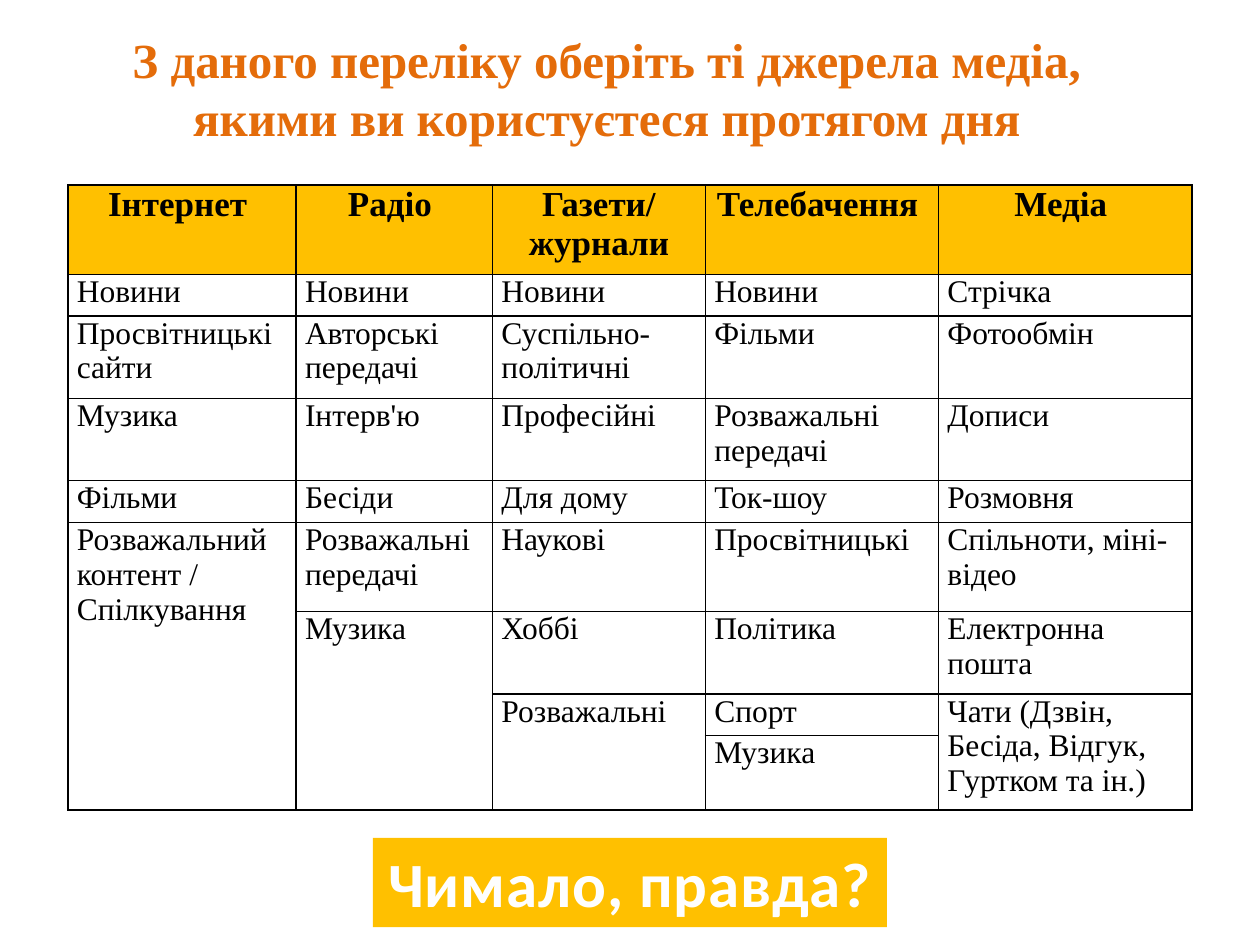
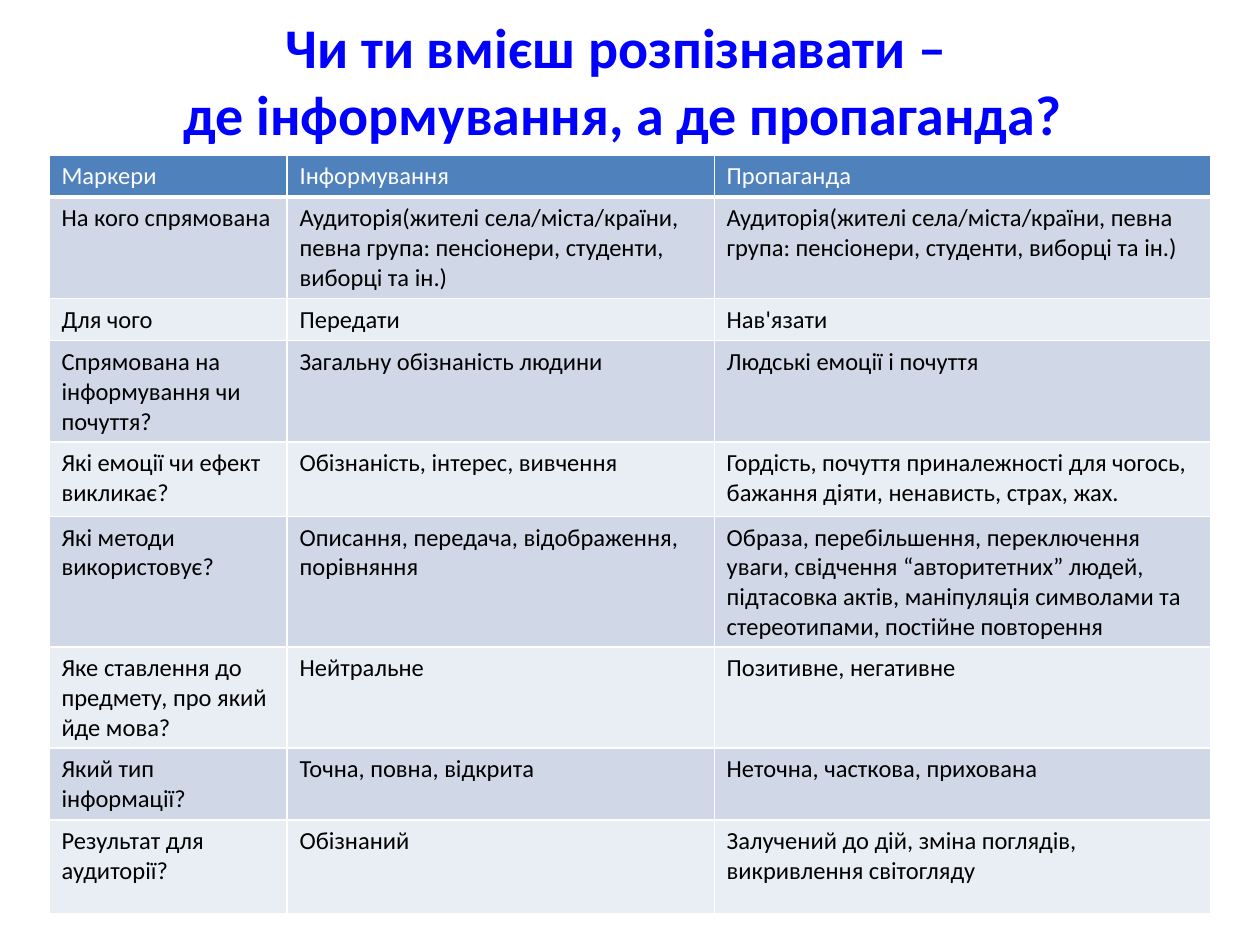
from dataclasses import dataclass

from lxml import etree
from pptx import Presentation
from pptx.dml.color import RGBColor
from pptx.enum.shapes import MSO_SHAPE
from pptx.enum.text import MSO_ANCHOR, MSO_AUTO_SIZE, PP_ALIGN
from pptx.oxml import parse_xml
from pptx.oxml.ns import nsdecls, qn
from pptx.util import Cm, Pt

RECTANGLE = MSO_SHAPE.RECTANGLE
TOP, MIDDLE = MSO_ANCHOR.TOP, MSO_ANCHOR.MIDDLE
GROW = MSO_AUTO_SIZE.SHAPE_TO_FIT_TEXT
LEFT, CENTER = PP_ALIGN.LEFT, PP_ALIGN.CENTER

BLACK = RGBColor(0x00, 0x00, 0x00)
WHITE = RGBColor(0xFF, 0xFF, 0xFF)
NEAR_WHITE = RGBColor(0xFE, 0xFE, 0xFE)
GOLD = RGBColor(0xFF, 0xC0, 0x00)
ORANGE = RGBColor(0xE4, 0x6C, 0x0A)
BRIGHT_BLUE = RGBColor(0x00, 0x00, 0xFF)
STEEL_BLUE = RGBColor(0x4F, 0x81, 0xBD)
DARK_BAND = RGBColor(0xD0, 0xD8, 0xE8)
LIGHT_BAND = RGBColor(0xE9, 0xED, 0xF4)

SERIF, SANS = "Times New Roman", "Calibri"


@dataclass(frozen=True)
class TextStyle:
    font: dict
    color: RGBColor
    align: PP_ALIGN = LEFT


@dataclass(frozen=True)
class Place:
    """Left, top, width and height in centimetres."""
    left: float
    top: float
    width: float
    height: float

    def lengths(self) -> tuple:
        return Cm(self.left), Cm(self.top), Cm(self.width), Cm(self.height)


@dataclass(frozen=True)
class TableLook:
    header: TextStyle
    body: TextStyle
    header_fill: RGBColor
    bands: tuple
    border: RGBColor
    header_rule: float
    margin_x: float
    margin_y: float


@dataclass(frozen=True)
class TableSpec:
    left: float
    top: float
    columns: tuple
    heights: tuple
    rows: list
    look: TableLook
    merges: tuple = ()


SOURCES_LOOK = TableLook(
    header=TextStyle({"name": SERIF, "size": Pt(20), "bold": True}, BLACK, CENTER),
    body=TextStyle({"name": SERIF, "size": Pt(18), "bold": False}, BLACK),
    header_fill=GOLD, bands=(WHITE,), border=BLACK, header_rule=1,
    margin_x=0.18, margin_y=0)

MARKERS_FONT = {"name": SANS, "size": Pt(14), "bold": False}
MARKERS_LOOK = TableLook(
    header=TextStyle(MARKERS_FONT, WHITE), body=TextStyle(MARKERS_FONT, BLACK),
    header_fill=STEEL_BLUE, bands=(DARK_BAND, LIGHT_BAND), border=WHITE,
    header_rule=3, margin_x=0.25, margin_y=0.13)

SOURCES = TableSpec(
    left=1.37, top=3.73,
    columns=(4.6, 3.96, 4.29, 4.7, 5.11),
    heights=(1.8, 0.84, 1.66, 1.66, 0.84, 1.8, 1.66, 0.84, 1.5),
    rows=[
        ["Інтернет ", "Радіо ", "Газети/\nжурнали", "Телебачення ", "Медіа "],
        ["Новини", "Новини", "Новини", "Новини", "Стрічка"],
        ["Просвітницькі сайти", "Авторські передачі", "Суспільно-політичні",
         "Фільми", "Фотообмін"],
        ["Музика", "Інтерв'ю", "Професійні", "Розважальні передачі", "Дописи"],
        ["Фільми", "Бесіди", "Для дому", "Ток-шоу", "Розмовня"],
        ["Розважальний контент / Спілкування", "Розважальні передачі", "Наукові",
         "Просвітницькі", "Спільноти, міні-відео"],
        ["", "Музика", "Хоббі", "Політика", "Електронна пошта"],
        ["", "", "Розважальні", "Спорт",
         "Чати (Дзвін, Бесіда, Відгук, Гуртком та ін.)"],
        ["", "", "", "Музика", ""],
    ],
    look=SOURCES_LOOK,
    merges=((5, 0), (6, 1), (7, 2), (7, 4)))

AUDIENCE = ("Аудиторія(жителі села/міста/країни, певна група: пенсіонери, "
            "студенти, виборці та ін.)")
MARKERS = TableSpec(
    left=0.99, top=3.12,
    columns=(4.8, 8.61, 10),
    heights=(0.84, 2.03, 0.84, 2.03, 1.5, 2.62, 2.03, 1.45, 1.88),
    rows=[
        ["Маркери", "Інформування", "Пропаганда"],
        ["На кого спрямована", AUDIENCE, AUDIENCE],
        ["Для чого", "Передати", "Нав'язати"],
        ["Спрямована на інформування чи почуття?",
         "Загальну обізнаність людини", "Людські емоції і почуття"],
        ["Які емоції чи ефект викликає?", "Обізнаність, інтерес, вивчення",
         "Гордість, почуття приналежності для чогось, бажання діяти, "
         "ненависть, страх, жах."],
        ["Які методи використовує?",
         "Описання, передача, відображення, порівняння",
         "Образа, перебільшення, переключення уваги, свідчення “авторитетних” "
         "людей, підтасовка актів, маніпуляція символами та стереотипами, "
         "постійне повторення"],
        ["Яке ставлення до предмету, про який йде мова?", "Нейтральне",
         "Позитивне, негативне"],
        ["Який тип інформації?", "Точна, повна, відкрита",
         "Неточна, часткова, прихована"],
        ["Результат для аудиторії?", "Обізнаний",
         "Залучений до дій, зміна поглядів, викривлення світогляду"],
    ],
    look=MARKERS_LOOK)


def write_text(frame, text: str, style: TextStyle) -> None:
    frame.text = text
    for para in frame.paragraphs:
        para.alignment = style.align
        for span in para.runs:
            for name, value in style.font.items():
                setattr(span.font, name, value)
            span.font.color.rgb = style.color


def add_titled_slide(deck, text: str, place: Place, style: TextStyle):
    slide = deck.slides.add_slide(deck.slide_layouts[5])
    title = slide.shapes.title
    title.left, title.top, title.width, title.height = place.lengths()
    frame = title.text_frame
    write_text(frame, text, style)
    frame.word_wrap = True
    frame.auto_size = GROW
    frame.vertical_anchor = TOP
    return slide


def set_borders(cell, color: RGBColor, bottom: float) -> None:
    """Draw 1 pt lines on three sides and a line of the given width below."""
    properties = cell._tc.get_or_add_tcPr()
    widths = {"lnL": 1, "lnR": 1, "lnT": 1, "lnB": bottom}
    for index, (side, width) in enumerate(widths.items()):
        properties.insert(index, parse_xml(
            f'<a:{side} {nsdecls("a")} w="{Pt(width)}"><a:solidFill>'
            f'<a:srgbClr val="{color}"/></a:solidFill></a:{side}>'))


def add_table(slide, spec: TableSpec) -> None:
    look = spec.look
    place = Place(spec.left, spec.top, sum(spec.columns), sum(spec.heights))
    table = slide.shapes.add_table(
        len(spec.heights), len(spec.columns), *place.lengths()).table
    table.first_row = table.horz_banding = False
    for column, width in zip(table.columns, spec.columns):
        column.width = Cm(width)
    for index, (row, height, texts) in enumerate(
            zip(table.rows, spec.heights, spec.rows)):
        row.height = Cm(height)
        is_header = index == 0
        band = look.bands[(index - 1) % len(look.bands)]
        for cell, text in zip(row.cells, texts):
            write_text(cell.text_frame, text, look.header if is_header else look.body)
            cell.margin_left = cell.margin_right = Cm(look.margin_x)
            cell.margin_top = cell.margin_bottom = Cm(look.margin_y)
            cell.fill.solid()
            cell.fill.fore_color.rgb = look.header_fill if is_header else band
            set_borders(cell, look.border, look.header_rule if is_header else 1)
    last_row = len(spec.heights) - 1
    for top, column in spec.merges:
        table.cell(top, column).merge(table.cell(last_row, column))


def add_text_effects(span) -> None:
    """Give the span wider letter spacing, a blue outline and a soft shadow."""
    properties = span.font._element
    properties.set("spc", "50")
    properties.insert(0, parse_xml(
        f'<a:ln {nsdecls("a")} w="{Pt(0.75)}"><a:solidFill>'
        f'<a:srgbClr val="{STEEL_BLUE}"/></a:solidFill></a:ln>'))
    effects = etree.Element(qn("a:effectLst"))
    shadow = etree.SubElement(effects, qn("a:outerShdw"), blurRad=str(Pt(3)),
                              dist=str(Pt(2)), dir="2700000", algn="tl")
    color = etree.SubElement(shadow, qn("a:srgbClr"), val=str(BLACK))
    etree.SubElement(color, qn("a:alpha"), val="40000")
    properties.find(qn("a:solidFill")).addnext(effects)


def add_banner(slide, text: str, place: Place, style: TextStyle) -> None:
    box = slide.shapes.add_shape(RECTANGLE, *place.lengths())
    box.shadow.inherit = False
    box.fill.solid()
    box.fill.fore_color.rgb = GOLD
    box.line.fill.background()
    frame = box.text_frame
    write_text(frame, text, style)
    frame.word_wrap = False
    frame.auto_size = GROW
    frame.vertical_anchor = MIDDLE
    add_text_effects(frame.paragraphs[0].runs[0])


def main() -> None:
    deck = Presentation()
    deck.slide_width, deck.slide_height = Cm(25.4), Cm(19.05)

    sources_slide = add_titled_slide(
        deck,
        "З даного переліку оберіть ті джерела медіа, якими ви користуєтеся протягом дня",
        Place(1.93, 0.46, 20.6, 2.64),
        TextStyle({"name": SERIF, "size": Pt(28), "bold": True}, ORANGE, CENTER))
    add_table(sources_slide, SOURCES)
    add_banner(
        sources_slide, "Чимало, правда?", Place(7.52, 16.89, 10.36, 1.8),
        TextStyle({"name": SANS, "size": Pt(36), "bold": True}, NEAR_WHITE, CENTER))

    markers_slide = add_titled_slide(
        deck, "Чи ти вмієш розпізнавати – \nде інформування, а де пропаганда?",
        Place(0.71, 0.13, 23.7, 3),
        TextStyle({"name": SANS, "size": Pt(32), "bold": True}, BRIGHT_BLUE, CENTER))
    add_table(markers_slide, MARKERS)

    deck.save("out.pptx")


if __name__ == "__main__":
    main()
